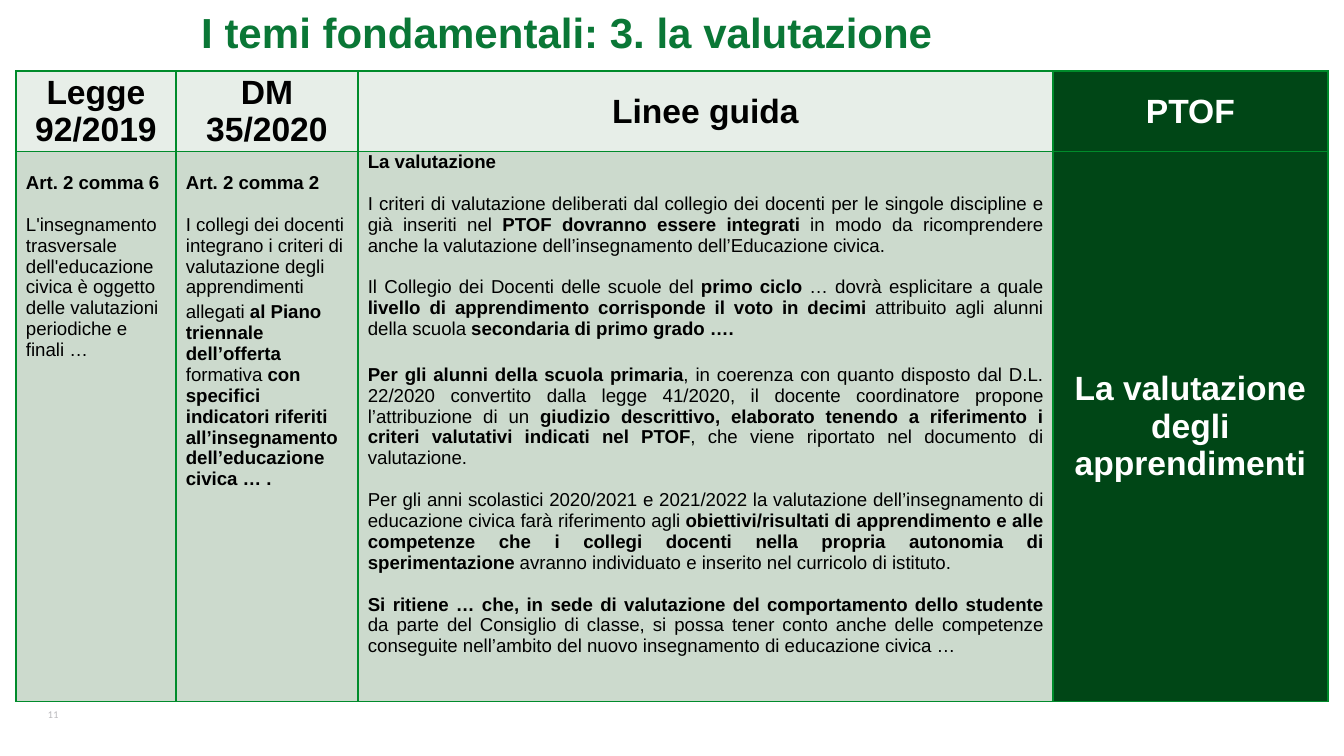
from lxml.etree import SubElement
from pptx import Presentation
from pptx.dml.color import RGBColor
from pptx.enum.text import MSO_ANCHOR, PP_ALIGN
from pptx.oxml.ns import qn
from pptx.util import Emu, Pt

PX = 914400 / 134.4
GREEN = RGBColor(0x0A, 0x77, 0x36)
DARK_GREEN = RGBColor(0x00, 0x46, 0x16)
BORDER_GREEN = RGBColor(0x00, 0x8B, 0x2B)
PALE = RGBColor(0xE7, 0xEE, 0xE8)
SAGE = RGBColor(0xCC, 0xDA, 0xCD)
GREY = RGBColor(0xB9, 0xB8, 0xBB)
BLACK = RGBColor(0, 0, 0)
WHITE = RGBColor(255, 255, 255)


def px(value):
    return Emu(round(value * PX))


def add_run(paragraph, text, size, color, bold=False, font="Arial"):
    run = paragraph.add_run()
    run.text = text
    run.font.size = Pt(size)
    run.font.name = font
    run.font.bold = bold
    run.font.color.rgb = color


# Slide
prs = Presentation()
prs.slide_width, prs.slide_height = px(1344), px(756)
slide = prs.slides.add_slide(prs.slide_layouts[6])

# Title and page number
for text, box, size, color, bold, font, align, wrap in (
    ("11", (48, 704, 47, 22), 5, GREY, False, "Lato", PP_ALIGN.LEFT, False),
    ("I temi fondamentali: 3. la valutazione", (58, 0, 1019, 63),
     22.5, GREEN, True, "Arial", PP_ALIGN.CENTER, True),
):
    frame = slide.shapes.add_textbox(*map(px, box)).text_frame
    frame.word_wrap = wrap
    frame.vertical_anchor = MSO_ANCHOR.MIDDLE
    frame.margin_left = frame.margin_right = 0
    frame.margin_top = frame.margin_bottom = 0
    frame.paragraphs[0].alignment = align
    add_run(frame.paragraphs[0], text, size, color, bold, font)

# Table contents: (space before in px, text), with ** around bold passages
LINE = 21
LAW = [
    (0, "**Art. 2 comma 6**"),
    (LINE, "L'insegnamento trasversale dell'educazione civica è oggetto delle "
           "valutazioni periodiche e finali …"),
]
DECREE = [
    (0, "**Art. 2 comma 2**"),
    (LINE, "I collegi dei docenti integrano i criteri di valutazione degli "
           "apprendimenti allegati **al Piano** **triennale dell’offerta** formativa "
           "**con specifici indicatori riferiti all’insegnamento dell’educazione**"),
    (0, "**civica … .**"),
]
GUIDELINES = [
    (0, "**La valutazione**"),
    (LINE, "I criteri di valutazione deliberati dal collegio dei docenti per le "
           "singole discipline e già inseriti nel **PTOF dovranno essere integrati** "
           "in modo da ricomprendere anche la valutazione dell’insegnamento "
           "dell’Educazione civica."),
    (LINE, "Il Collegio dei Docenti delle scuole del **primo ciclo **… dovrà "
           "esplicitare a quale **livello di apprendimento corrisponde il voto in "
           "decimi** attribuito agli alunni della scuola **secondaria di primo "
           "grado ….**"),
    (25, "**Per gli alunni della scuola primaria**, in coerenza con quanto disposto "
         "dal D.L. 22/2020 convertito dalla legge 41/2020, il docente coordinatore "
         "propone l’attribuzione di un **giudizio descrittivo, elaborato tenendo a "
         "riferimento i criteri valutativi indicati nel PTOF**, che viene riportato "
         "nel documento di valutazione."),
    (LINE, "Per gli anni scolastici 2020/2021 e 2021/2022 la valutazione "
           "dell’insegnamento di educazione civica farà riferimento agli "
           "**obiettivi/risultati di apprendimento e alle competenze che i collegi "
           "docenti nella propria autonomia di sperimentazione** avranno individuato "
           "e inserito nel curricolo di istituto."),
    (LINE, "**Si ritiene … che, in sede di valutazione del comportamento dello "
           "studente **da parte del Consiglio di classe, si possa tener conto anche "
           "delle competenze conseguite nell’ambito del nuovo insegnamento di "
           "educazione civica …"),
]

# Table grid
table = slide.shapes.add_table(2, 4, px(16), px(71), px(1312), px(625)).table
table.first_row = table.horz_banding = False
for column, width in zip(table.columns, (160, 182, 695, 275)):
    column.width = px(width)
for row, height in zip(table.rows, (75, 550)):
    row.height = px(height)

# Large centred labels: header row and the PTOF column
for row, col, label in (
    (0, 0, "Legge 92/2019"), (0, 1, "DM 35/2020"), (0, 2, "Linee guida"),
    (0, 3, "PTOF"), (1, 3, "La valutazione degli apprendimenti"),
):
    cell = table.cell(row, col)
    cell.vertical_anchor = MSO_ANCHOR.MIDDLE
    cell.margin_left = cell.margin_right = px(7)
    cell.margin_top = cell.margin_bottom = 0
    paragraph = cell.text_frame.paragraphs[0]
    paragraph.alignment = PP_ALIGN.CENTER
    add_run(paragraph, label, 18, WHITE if col == 3 else BLACK, True)

# Body texts
for col, (content, top, align) in enumerate((
    (LAW, LINE, PP_ALIGN.LEFT),
    (DECREE, LINE, PP_ALIGN.LEFT),
    (GUIDELINES, 0, PP_ALIGN.JUSTIFY),
)):
    cell = table.cell(1, col)
    cell.margin_left = cell.margin_right = px(10)
    cell.margin_top, cell.margin_bottom = px(top), 0
    for index, (gap, text) in enumerate(content):
        frame = cell.text_frame
        paragraph = frame.add_paragraph() if index else frame.paragraphs[0]
        paragraph.alignment = align
        if gap:
            paragraph.space_before = px(gap)
        for part, passage in enumerate(text.split("**")):
            if passage:
                size = 12 if passage == " " else 10
                add_run(paragraph, passage, size, BLACK, part % 2 == 1)

# Borders and fills; the border lines come before the fill in the cell XML
for row in range(2):
    for col in range(4):
        cell = table.cell(row, col)
        properties = cell._tc.get_or_add_tcPr()
        for side in ("a:lnL", "a:lnR", "a:lnT", "a:lnB"):
            line = SubElement(properties, qn(side), w=str(Pt(1)))
            solid = SubElement(line, qn("a:solidFill"))
            SubElement(solid, qn("a:srgbClr"), val=str(BORDER_GREEN))
        cell.fill.solid()
        cell.fill.fore_color.rgb = DARK_GREEN if col == 3 else (PALE, SAGE)[row]

prs.save("out.pptx")
